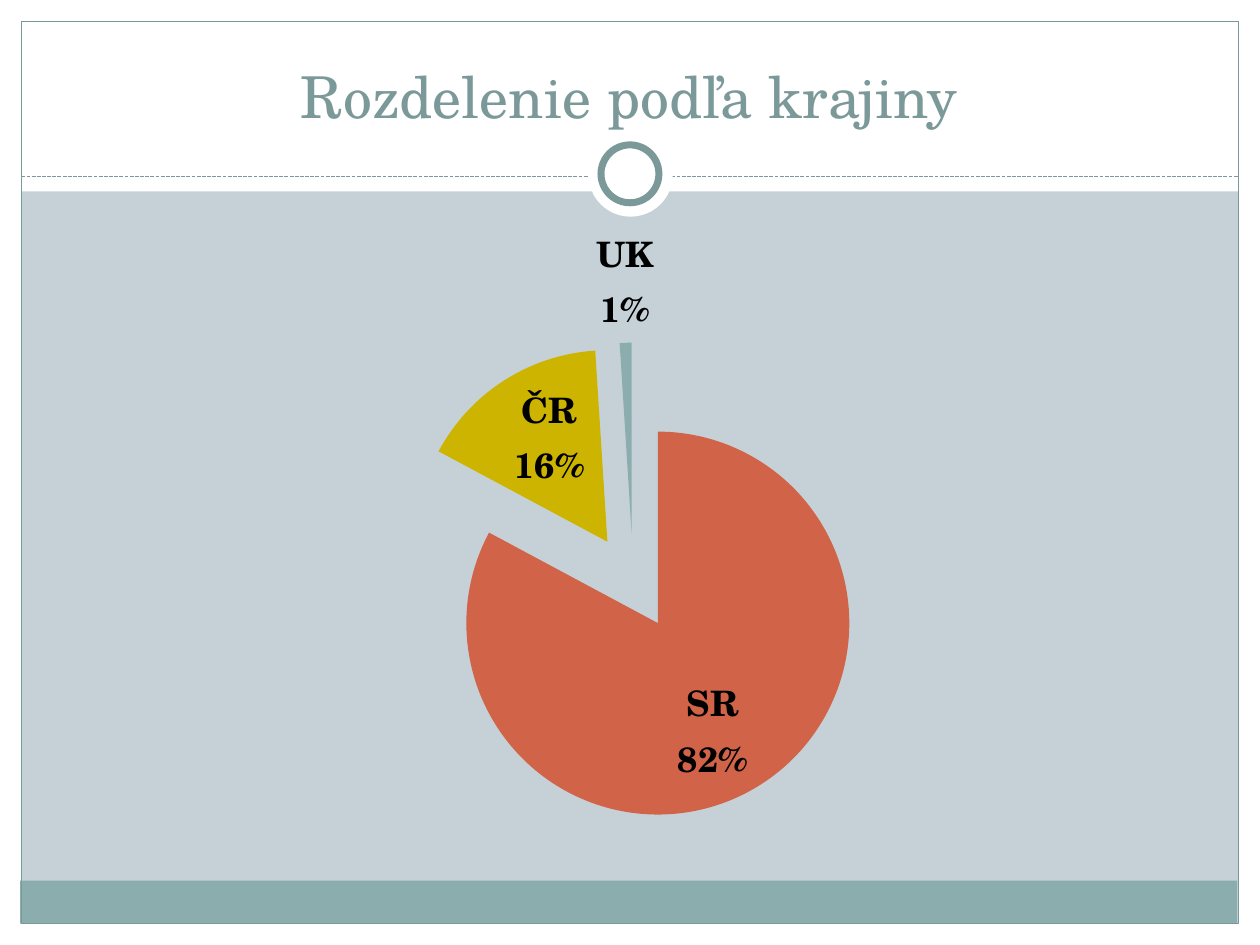
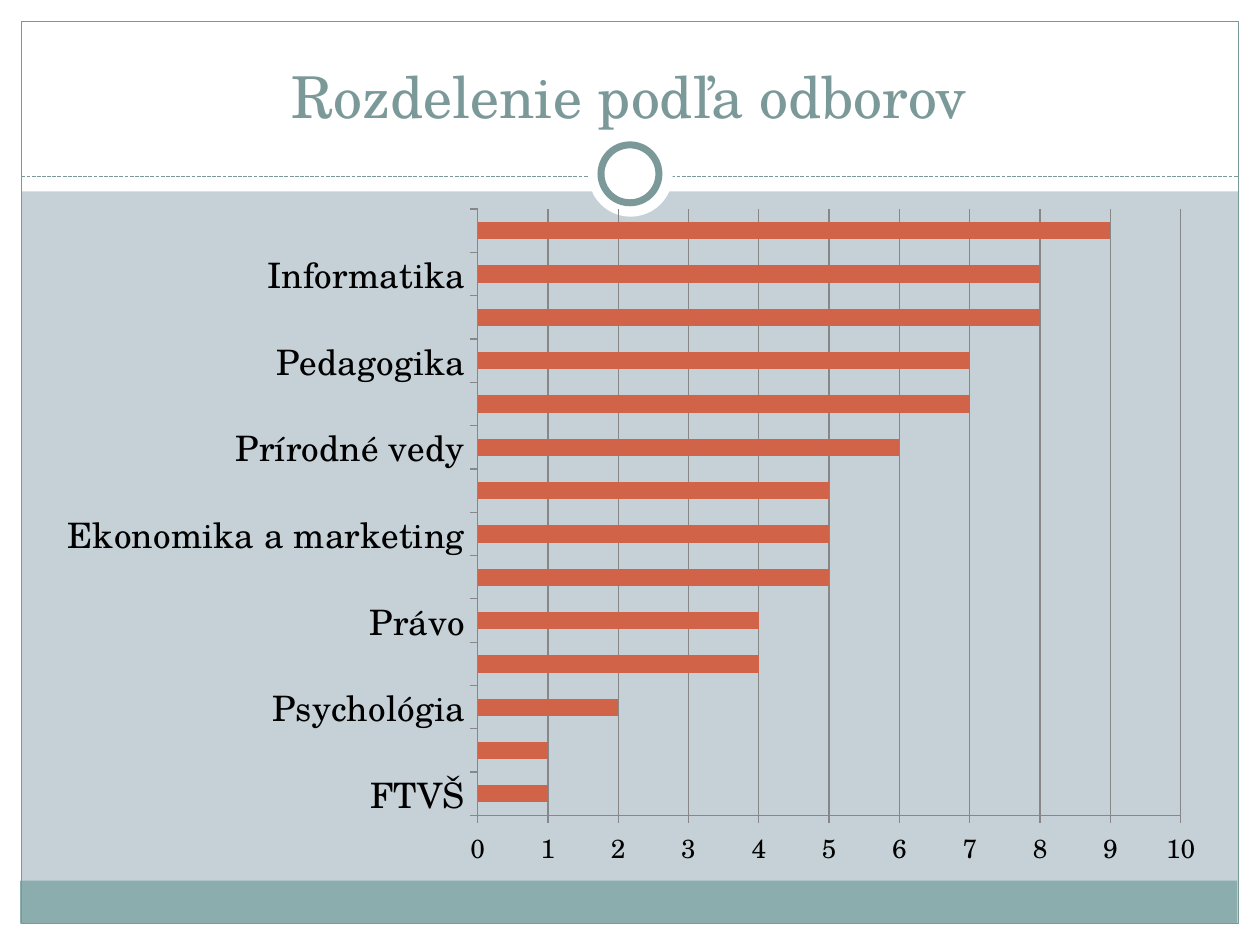
from lxml import etree
from pptx import Presentation
from pptx import util as u
from pptx.chart.data import CategoryChartData
from pptx.dml.color import RGBColor
from pptx.enum import chart as ch, dml, shapes, text
from pptx.oxml.ns import qn

PX = 9144
FONT = "TeX Gyre Schola"
HUES = {"back": "C5D1D7", "white": "FFFFFF", "band": "8CADAE", "edge": "7C999A",
        "red": "D16349", "gold": "CCB400", "grid": "878787", "ink": "000000"}
LANDS = {"SR": (82, "red"), "ČR": (16, "gold"), "UK": (1, "band")}
FIELDS = {"FTVŠ": 1, "Žurnalistika": 1, "Psychológia": 2, "Ošetrovateľstvo": 4,
          "Právo": 4, "Poľn.a region. rozvoj": 5, "Ekonomika a marketing": 5,
          "Manažment": 5, "Prírodné vedy": 6, "Medicína": 7, "Pedagogika": 7,
          "Spoločenské vedy a filozofia": 8, "Informatika": 8, "Technický smer": 9}


def hue(name):
    """Return the named colour."""
    return RGBColor.from_string(HUES[name])


def px(*sizes):
    """Turn px into EMU."""
    return [u.Emu(size * PX) for size in sizes]


class Deck:
    """Hold the style and the current slide."""

    def __init__(self):
        """Start an empty deck."""
        self.prs = Presentation()
        self.prs.slide_width, self.prs.slide_height = px(1000, 750)

    def page(self, title):
        """Add a slide with its frame and title."""
        self.slide = self.prs.slides.add_slide(self.prs.slide_layouts[6])
        fill = self.slide.background.fill
        fill.solid()
        fill.fore_color.rgb = hue("back")
        rect, oval = shapes.MSO_SHAPE.RECTANGLE, shapes.MSO_SHAPE.OVAL
        for box in ((0, 733, 1000, 17), (0, 0, 1000, 152),
                    (0, 0, 17, 750), (983, 0, 17, 750)):
            self.shape(rect, box, "white")
        self.shape(rect, (16, 699, 966, 34), "band")
        self.shape(rect, (17, 17, 966, 716), line=0.75)
        self.dash(17, 983, 140)
        self.shape(oval, (467, 105, 67, 67), "white")
        self.shape(oval, (477, 115, 46, 46), "white", 4)
        self.title(title)

    def shape(self, kind, box, fill=None, line=0):
        """Add a preset shape."""
        item = self.slide.shapes.add_shape(kind, *px(*box))
        item.shadow.inherit = False
        if fill:
            item.fill.solid()
            item.fill.fore_color.rgb = hue(fill)
        else:
            item.fill.background()
        if line:
            self.stroke(item.line, "edge", line)
        else:
            item.line.fill.background()

    def stroke(self, line, name, width):
        """Style a line."""
        line.color.rgb = hue(name)
        line.width = u.Pt(width)

    def dash(self, left, right, top):
        """Add a dashed rule."""
        rule = self.slide.shapes.add_connector(
            shapes.MSO_CONNECTOR.STRAIGHT, *px(left, top, right, top))
        self.stroke(rule.line, "edge", 0.75)
        rule.line.dash_style = dml.MSO_LINE.SQUARE_DOT
        etree.SubElement(rule.element.spPr, qn("a:effectLst"))

    def font(self, font, size, name="ink", bold=False):
        """Style a font."""
        font.name, font.size, font.bold = FONT, u.Pt(size), bold
        font.color.rgb = hue(name)

    def title(self, words):
        """Add the slide title."""
        frame = self.slide.shapes.add_textbox(*px(33, 25, 933, 83)).text_frame
        frame.word_wrap = True
        frame.vertical_anchor = text.MSO_ANCHOR.BOTTOM
        frame.text = words
        para = frame.paragraphs[0]
        para.alignment = text.PP_ALIGN.CENTER
        self.font(para.runs[0].font, 33, "edge")

    def chart(self, kind, box, cats, vals, inner):
        """Add a chart whose plot fills the inner fractions."""
        data = CategoryChartData()
        data.categories = cats
        data.add_series("Series 1", vals)
        chart = self.slide.shapes.add_chart(kind, *px(*box), data).chart
        chart.has_legend = chart.has_title = False
        self.font(chart.font, 10)
        area = chart.element.find(".//" + qn("c:plotArea"))
        for old in area.findall(qn("c:layout")):
            area.remove(old)
        layout = etree.Element(qn("c:layout"))
        area.insert(0, layout)
        manual = etree.SubElement(layout, qn("c:manualLayout"))
        pairs = [("layoutTarget", "inner"), ("xMode", "edge"), ("yMode", "edge")]
        for tag, val in pairs + list(zip("xywh", inner)):
            etree.SubElement(manual, qn("c:" + tag)).set("val", str(val))
        return chart

    def pie(self, box, parts, inner):
        """Add an exploded pie chart."""
        vals, hues = zip(*parts.values())
        chart = self.chart(ch.XL_CHART_TYPE.PIE, box, list(parts), vals, inner)
        plot = chart.plots[0]
        plot.vary_by_categories = True
        row = plot.series[0]
        for spot, name in enumerate(hues):
            fill = row.points[spot].format.fill
            fill.solid()
            fill.fore_color.rgb = hue(name)
        burst = etree.Element(qn("c:explosion"))
        burst.set("val", "25")
        row._element.find(qn("c:dPt")).addprevious(burst)
        tags = row.data_labels
        tags.show_value = tags.show_category_name = True
        tags.number_format, tags.number_format_is_linked = '0"%"', False
        tags.position = ch.XL_LABEL_POSITION.BEST_FIT
        self.font(tags.font, 20, bold=True)
        split = etree.Element(qn("c:separator"))
        split.text = "\n"
        row._element.find(".//" + qn("c:showBubbleSize")).addnext(split)

    def bars(self, box, rows, inner):
        """Add a horizontal bar chart."""
        chart = self.chart(ch.XL_CHART_TYPE.BAR_CLUSTERED, box,
                           list(rows), list(rows.values()), inner)
        plot = chart.plots[0]
        plot.vary_by_categories, plot.gap_width = False, 150
        fill = plot.series[0].format.fill
        fill.solid()
        fill.fore_color.rgb = hue("red")
        for axis, size in ((chart.category_axis, 20), (chart.value_axis, 15)):
            axis.major_tick_mark = ch.XL_TICK_MARK.OUTSIDE
            axis.minor_tick_mark = ch.XL_TICK_MARK.NONE
            self.font(axis.tick_labels.font, size)
            self.stroke(axis.format.line, "grid", 0.75)
        axis = chart.value_axis
        axis.minimum_scale, axis.maximum_scale, axis.major_unit = 0, 10, 1
        axis.has_major_gridlines = True
        self.stroke(axis.major_gridlines.format.line, "grid", 0.75)


def main():
    """Build both slides."""
    deck = Deck()
    deck.page("Rozdelenie podľa krajiny")
    deck.pie((33, 167, 930, 500), LANDS, (0.3, 0.21, 0.41, 0.76))
    deck.page("Rozdelenie podľa odborov")
    deck.bars((35, 155, 930, 547), FIELDS, (0.37, 0.02, 0.6, 0.88))
    deck.prs.save("out.pptx")


if __name__ == "__main__":
    main()
